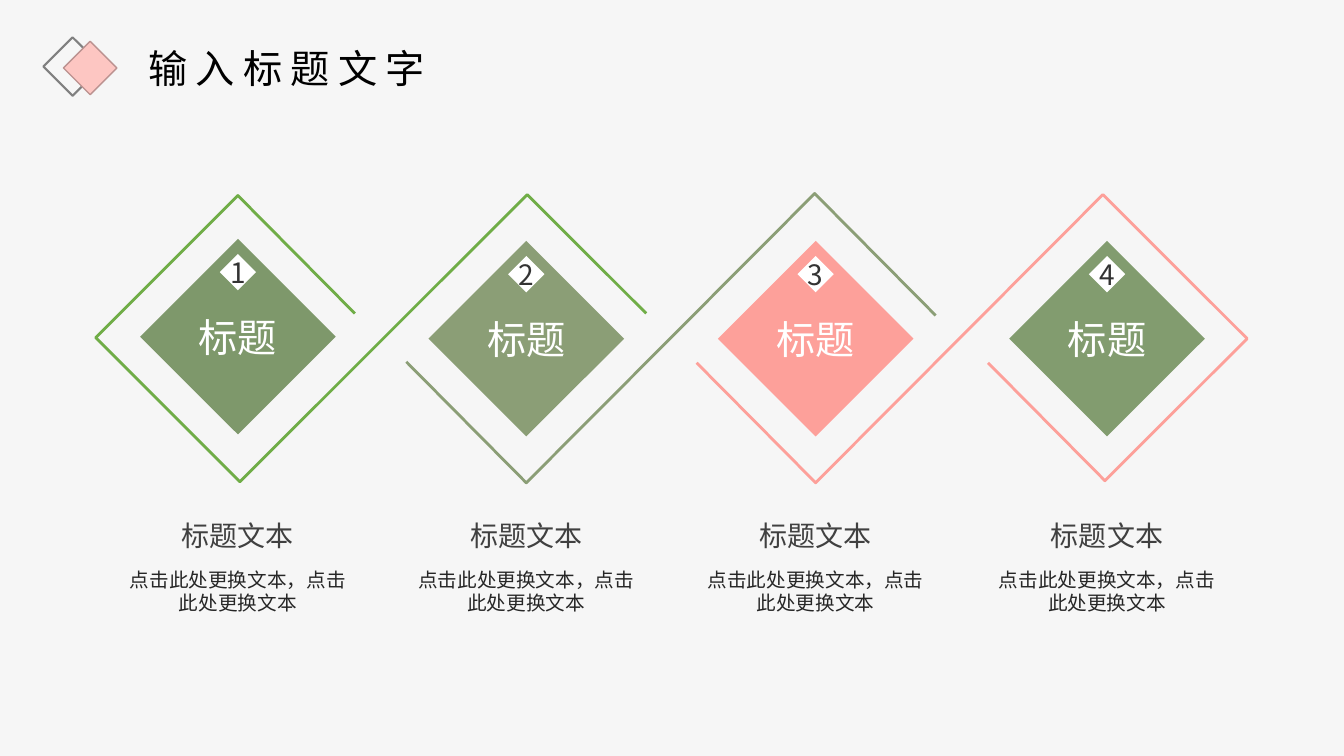
import pptx
import pptx.util
import pptx.dml.color
import pptx.enum.shapes
import pptx.enum.text
import pptx.oxml.ns
import lxml.etree

Inches = pptx.util.Inches
ALIGN = pptx.enum.text.PP_ALIGN
ANCHOR = pptx.enum.text.MSO_ANCHOR

# Content: steps as centre x, top y, fill, label, heading, description
TITLE = "输入标题文字"
DESCRIPTION = "点击此处更换文本，点击此处更换文本"
STEPS = [
    (2.36, 2.37, "7E986B", "标题", "标题文本", DESCRIPTION),
    (5.22, 2.39, "8B9E76", "标题", "标题文本", DESCRIPTION),
    (8.09, 2.39, "FDA09A", "标题", "标题文本", DESCRIPTION),
    (10.98, 2.39, "829C6F", "标题", "标题文本", DESCRIPTION),
]
RIBBONS = [
    ("70AD47", [(6.41, 3.11), (5.23, 1.93), (2.38, 4.78),
                (0.95, 3.35), (2.36, 1.94), (3.52, 3.11)]),
    ("8B9E76", [(4.03, 3.59), (5.22, 4.79), (8.08, 1.92), (9.28, 3.13)]),
    ("FDA09A", [(6.91, 3.6), (8.09, 4.79), (10.94, 1.93),
                (12.37, 3.36), (10.96, 4.77), (9.8, 3.6)]),
]
# Ornament diamonds: left, top, size, fill, line colour, line width
ORNAMENT = [
    (0.43, 0.37, 0.58, None, "808080", 1.5),
    (0.63, 0.41, 0.53, "FDC6C2", "BB9290", 1),
]

THEME = {
    "font": "Noto Sans CJK SC",
    "background": "F6F6F6",
    "badge": "FFFFFF",
    "ribbon_width": 2,
    "title": (28, "000000"),
    "label": (28, "FFFFFF"),
    "number": (20, "333333"),
    "heading": (20, "404040"),
    "description": (14, "262626"),
}
DIAMOND, BADGE, BADGE_DROP = 1.94, 0.36, 0.15


def color(value):
    return pptx.dml.color.RGBColor.from_string(value)


def write(shape, text, style, align=ALIGN.CENTER, **frame_format):
    """Put one styled paragraph in a shape and return its run."""
    frame = shape.text_frame
    values = {"word_wrap": True, "vertical_anchor": ANCHOR.TOP,
              "auto_size": pptx.enum.text.MSO_AUTO_SIZE.NONE, **frame_format}
    for name, value in values.items():
        setattr(frame, name, value)
    paragraph = frame.paragraphs[0]
    paragraph.alignment = align
    run = paragraph.add_run()
    run.text = text
    size, text_color = THEME[style]
    run.font.size = pptx.util.Pt(size)
    run.font.color.rgb = color(text_color)
    run.font.name = THEME["font"]
    east_asian = lxml.etree.SubElement(run.font._element, pptx.oxml.ns.qn("a:ea"))
    east_asian.set("typeface", THEME["font"])
    return run


def paint(shape, fill=None, line=None, width=1):
    shape.shadow.inherit = False
    if fill:
        shape.fill.solid()
        shape.fill.fore_color.rgb = color(fill)
    else:
        shape.fill.background()
    if line:
        shape.line.color.rgb = color(line)
        shape.line.width = pptx.util.Pt(width)
    else:
        shape.line.fill.background()


def add_diamond(slide, left, top, size, **paint_format):
    shape = slide.shapes.add_shape(
        pptx.enum.shapes.MSO_SHAPE.DIAMOND,
        Inches(left), Inches(top), Inches(size), Inches(size))
    paint(shape, **paint_format)
    return shape


def add_centred_box(slide, center, top, width, height):
    return slide.shapes.add_textbox(
        Inches(center - width / 2), Inches(top), Inches(width), Inches(height))


def add_ribbon(slide, line, points):
    corners = [(Inches(x), Inches(y)) for x, y in points]
    builder = slide.shapes.build_freeform(*corners[0])
    builder.add_line_segments(corners[1:], close=False)
    paint(builder.convert_to_shape(), line=line, width=THEME["ribbon_width"])


def add_step(slide, number, center, top, fill, label, heading, description):
    inside = {"margin_left": 0, "margin_right": 0, "margin_top": 0,
              "margin_bottom": 0, "vertical_anchor": ANCHOR.MIDDLE,
              "word_wrap": False}
    diamond = add_diamond(slide, center - DIAMOND / 2, top, DIAMOND, fill=fill)
    write(diamond, label, "label", **inside)
    badge = add_diamond(slide, center - BADGE / 2, top + BADGE_DROP, BADGE,
                        fill=THEME["badge"])
    write(badge, str(number), "number", **inside)
    write(add_centred_box(slide, center, 5.09, 1.32, 0.44), heading, "heading",
          word_wrap=False)
    write(add_centred_box(slide, center, 5.63, 2.37, 1.17), description,
          "description", margin_top=0, margin_bottom=0)


def main():
    presentation = pptx.Presentation()
    presentation.slide_width = Inches(13.33)
    presentation.slide_height = Inches(7.5)
    slide = presentation.slides.add_slide(presentation.slide_layouts[5])
    slide.background.fill.solid()
    slide.background.fill.fore_color.rgb = color(THEME["background"])

    # Title with its ornament
    for left, top, size, fill, line, width in ORNAMENT:
        add_diamond(slide, left, top, size, fill=fill, line=line, width=width)
    title = slide.shapes.title
    place = {"left": 1.37, "top": 0.39, "width": 3.4, "height": 0.57}
    for name, value in place.items():
        setattr(title, name, Inches(value))
    run = write(title, TITLE, "title", ALIGN.LEFT)
    run.font._element.set("spc", "600")

    # Ribbons and steps
    for line, points in RIBBONS:
        add_ribbon(slide, line, points)
    for number, step in enumerate(STEPS, 1):
        add_step(slide, number, *step)

    presentation.save("out.pptx")


if __name__ == "__main__":
    main()
